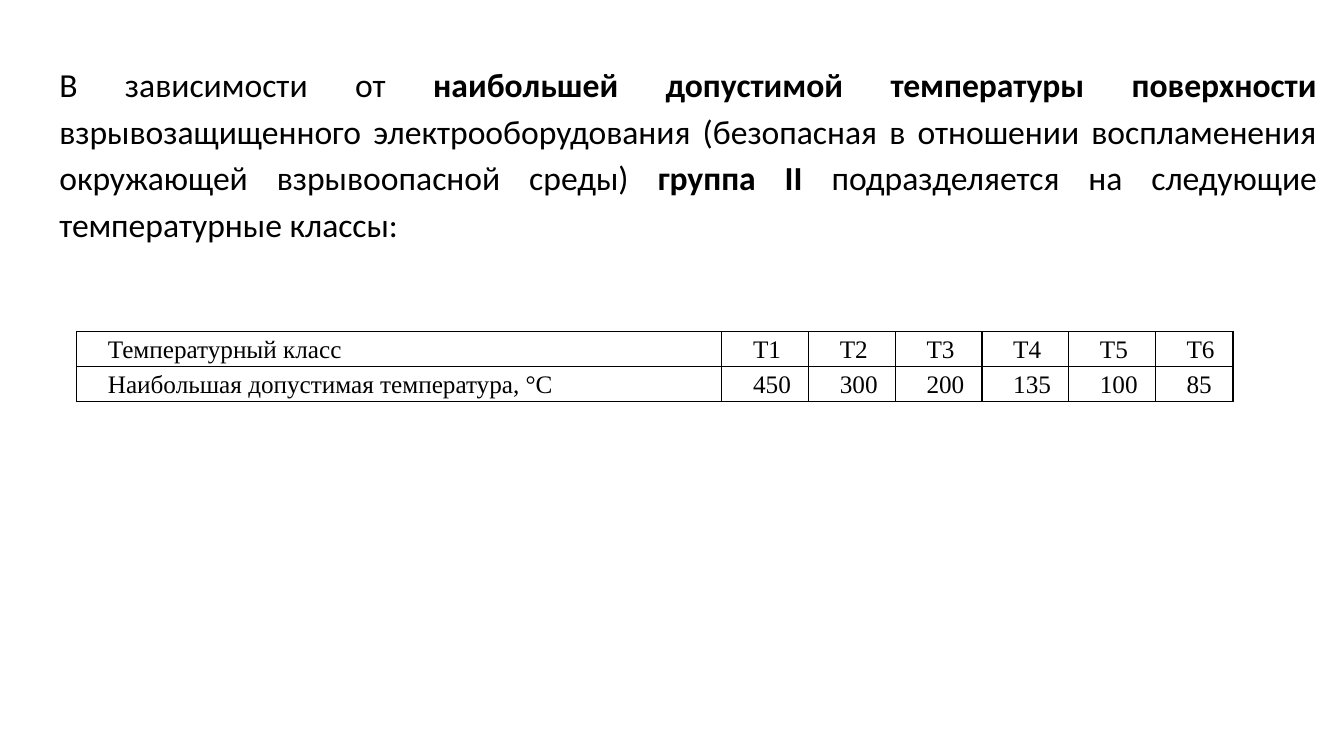
import dataclasses

import pptx
import pptx.dml.color
import pptx.enum.text
import pptx.oxml
import pptx.oxml.ns
import pptx.util
from pptx.util import Inches


@dataclasses.dataclass(frozen=True)
class Theme:
    ink: str = "000000"
    body_font: str = "Calibri"
    table_font: str = "Times New Roman"
    body_size: int = 24
    table_size: int = 18
    line_spacing: float = 1.15
    first_line_indent: float = 0.24
    border_width: int = 1


def apply_format(target, values):
    for name, value in values.items():
        setattr(target, name, value)


class SlideBuilder:
    def __init__(self, slide, theme):
        self.slide = slide
        self.theme = theme

    def add_runs(self, paragraph, runs, font_name, size):
        apply_format(paragraph, {
            "alignment": pptx.enum.text.PP_ALIGN.JUSTIFY,
            "line_spacing": self.theme.line_spacing,
        })
        for wording, bold in runs:
            run = paragraph.add_run()
            run.text = wording
            apply_format(run.font, {
                "name": font_name, "size": pptx.util.Pt(size), "bold": bold,
            })
            run.font.color.rgb = pptx.dml.color.RGBColor.from_string(self.theme.ink)

    def text(self, left, top, width, height, runs):
        box = self.slide.shapes.add_textbox(
            Inches(left), Inches(top), Inches(width), Inches(height))
        box.text_frame.word_wrap = True
        self.add_runs(box.text_frame.paragraphs[0], runs,
                      self.theme.body_font, self.theme.body_size)

    def border(self, cell):
        properties = cell._tc.get_or_add_tcPr()
        width = pptx.util.Pt(self.theme.border_width)
        for position, side in enumerate(("lnL", "lnR", "lnT", "lnB")):
            properties.insert(position, pptx.oxml.parse_xml(
                f'<a:{side} {pptx.oxml.ns.nsdecls("a")} w="{width}"><a:solidFill>'
                f'<a:srgbClr val="{self.theme.ink}"/></a:solidFill></a:{side}>'))

    def table(self, left, top, column_widths, row_height, rows):
        table = self.slide.shapes.add_table(
            len(rows), len(column_widths), Inches(left), Inches(top),
            Inches(sum(column_widths)), Inches(row_height * len(rows))).table
        apply_format(table, {"first_row": False, "horz_banding": False})
        for column, width in zip(table.columns, column_widths):
            column.width = Inches(width)
        for row, values in zip(table.rows, rows):
            for cell, value in zip(row.cells, values):
                apply_format(cell, {
                    "margin_left": Inches(0.07), "margin_right": Inches(0.07),
                    "margin_top": 0, "margin_bottom": 0,
                })
                cell.fill.background()
                self.border(cell)
                paragraph = cell.text_frame.paragraphs[0]
                self.add_runs(paragraph, [(value, False)],
                              self.theme.table_font, self.theme.table_size)
                indent = Inches(self.theme.first_line_indent)
                paragraph._p.get_or_add_pPr().set("indent", str(indent))


def main():
    presentation = pptx.Presentation()
    apply_format(presentation, {
        "slide_width": Inches(13.33), "slide_height": Inches(7.5),
    })
    slide = presentation.slides.add_slide(presentation.slide_layouts[6])
    builder = SlideBuilder(slide, Theme())
    builder.text(0.49, 0.53, 12.67, 2.4, [
        ("В зависимости от ", False),
        ("наибольшей допустимой температуры поверхности", True),
        (" взрывозащищенного электрооборудования (безопасная в отношении "
         "воспламенения окружающей взрывоопасной среды) ", False),
        ("группа II ", True),
        ("подразделяется на следующие температурные классы:", False),
    ])
    temperature_limits = {
        "Температурный класс": "Наибольшая допустимая температура, °С",
        "Т1": "450", "Т2": "300", "Т3": "200",
        "Т4": "135", "Т5": "100", "Т6": "85",
    }
    builder.table(0.76, 3.29, [6.4] + [0.86] * 5 + [0.77], 0.32,
                  [temperature_limits.keys(), temperature_limits.values()])
    presentation.save("out.pptx")


if __name__ == "__main__":
    main()
